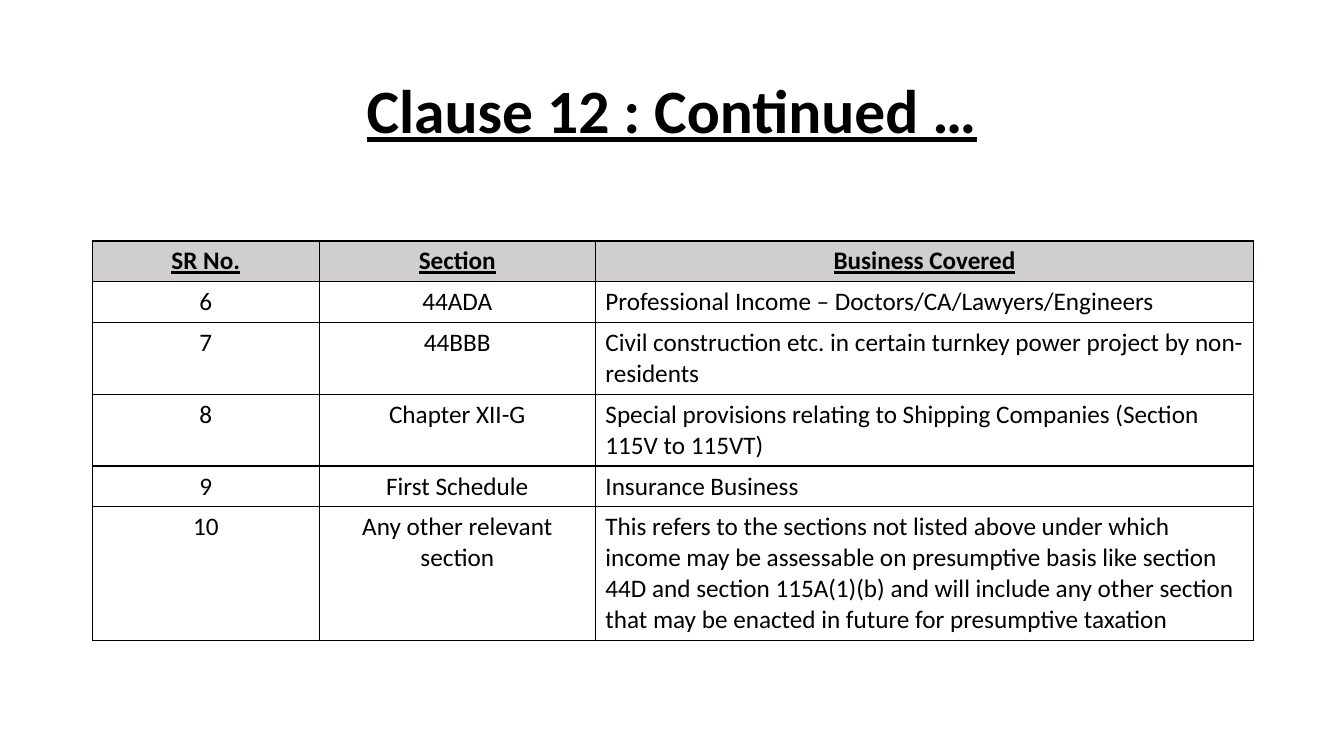
import pptx
import pptx.dml.color
import pptx.enum.text
import pptx.oxml
import pptx.oxml.ns
import pptx.util
from dataclasses import dataclass

Pt = pptx.util.Pt
Align = pptx.enum.text.PP_ALIGN
Anchor = pptx.enum.text.MSO_ANCHOR


@dataclass(frozen=True)
class Theme:
    font: str = "Calibri"
    ink: str = "000000"
    header_fill: str = "D0CECE"
    title_size: float = 44
    table_size: float = 18
    border_width: float = 1


theme = Theme()


def write(frame, text, size=theme.table_size, heading=False, align=Align.LEFT, spacing=None):
    """Put one paragraph in a text frame; headings are bold and underlined."""
    para = frame.paragraphs[0]
    para.alignment = align
    para.line_spacing = spacing
    span = para.add_run()
    span.text = text
    span.font.name = theme.font
    span.font.size = Pt(size)
    span.font.bold = heading
    span.font.underline = heading
    span.font.color.rgb = pptx.dml.color.RGBColor.from_string(theme.ink)


def draw_borders(cell):
    properties = cell._tc.get_or_add_tcPr()
    for position, side in enumerate(("lnL", "lnR", "lnT", "lnB")):
        border = pptx.oxml.parse_xml(
            f'<a:{side} {pptx.oxml.ns.nsdecls("a")} w="{Pt(theme.border_width)}">'
            f'<a:solidFill><a:srgbClr val="{theme.ink}"/></a:solidFill></a:{side}>'
        )
        properties.insert(position, border)


deck = pptx.Presentation()
deck.slide_width, deck.slide_height = Pt(960), Pt(540)
page = deck.slides.add_slide(deck.slide_layouts[6])

# Title
title = page.shapes.add_textbox(Pt(66), Pt(28.75), Pt(828), Pt(104.4)).text_frame
title.word_wrap = True
title.vertical_anchor = Anchor.MIDDLE
write(title, "Clause 12 : Continued …", size=theme.title_size, heading=True,
      align=Align.CENTER, spacing=0.9)

# Table of sections: each row holds its three texts and its number of lines
rows = [
    ("SR No.", "Section", "Business Covered", 1),
    ("6", "44ADA", "Professional Income – Doctors/CA/Lawyers/Engineers", 1),
    ("7", "44BBB", "Civil construction etc. in certain turnkey power project by non-residents", 2),
    ("8", "Chapter XII-G",
     "Special provisions relating to Shipping Companies (Section 115V to 115VT)", 2),
    ("9", "First Schedule", "Insurance Business", 1),
    ("10", "Any other relevant section",
     "This refers to the sections not listed above under which income may be assessable on "
     "presumptive basis like section 44D and section 115A(1)(b) and will include any other "
     "section that may be enacted in future for presumptive taxation", 4),
]
column_widths = [162, 197.3, 470.2]
line_height, row_padding = 22, 7.2
row_heights = [row_padding + line_height * row[-1] for row in rows]

table = page.shapes.add_table(
    len(rows), len(column_widths), Pt(66), Pt(172.1), Pt(sum(column_widths)), Pt(sum(row_heights))
).table
table.horz_banding = False
for column, width in zip(table.columns, column_widths):
    column.width = Pt(width)

for row_index, (*texts, _) in enumerate(rows):
    table.rows[row_index].height = Pt(row_heights[row_index])
    is_header = row_index == 0
    for column_index, text in enumerate(texts):
        cell = table.cell(row_index, column_index)
        if is_header:
            cell.fill.solid()
            cell.fill.fore_color.rgb = pptx.dml.color.RGBColor.from_string(theme.header_fill)
        else:
            cell.fill.background()
        centred = is_header or column_index < 2
        write(cell.text_frame, text, heading=is_header,
              align=Align.CENTER if centred else Align.LEFT)
        draw_borders(cell)

deck.save("out.pptx")
